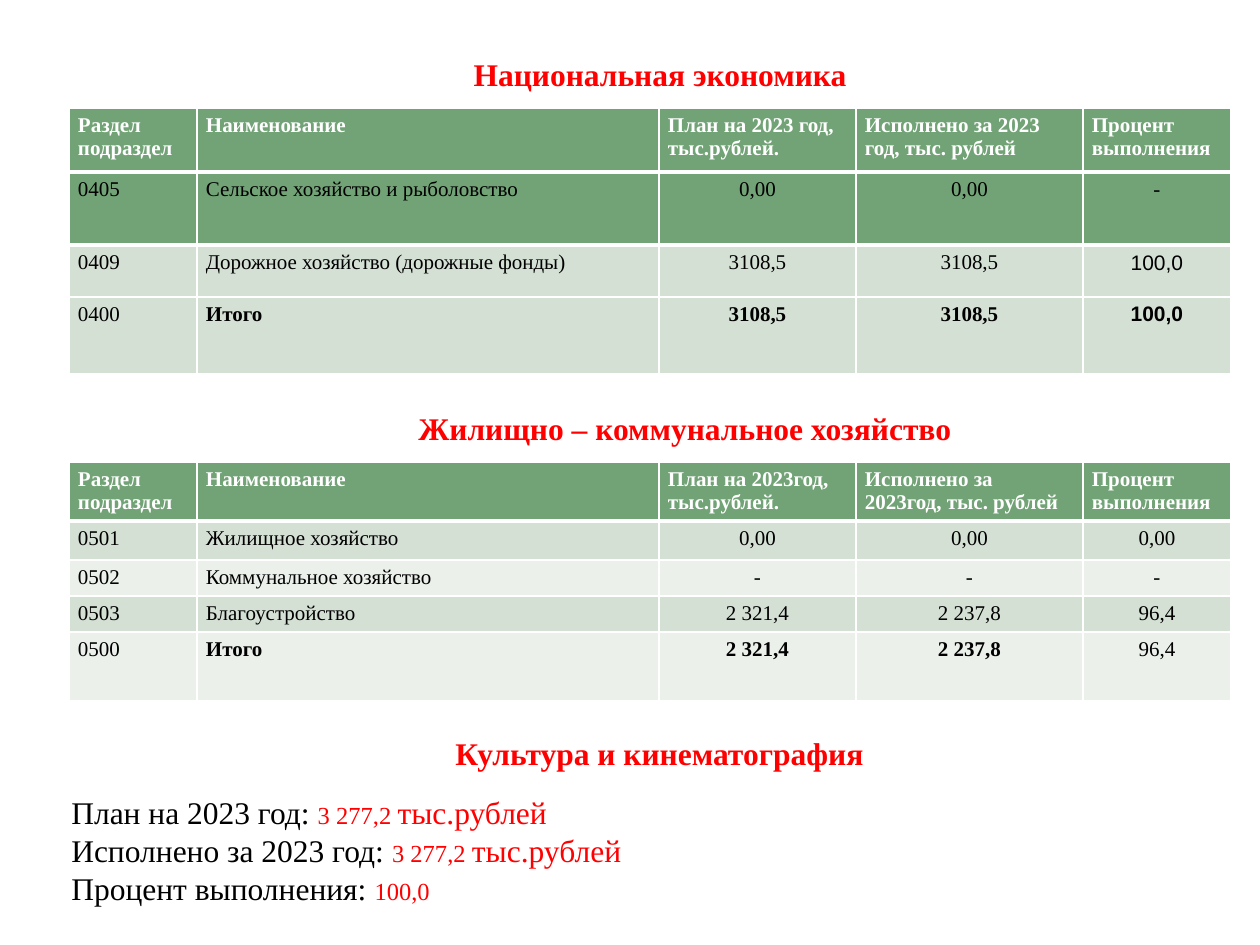
from dataclasses import dataclass

from lxml import etree
from pptx import Presentation
from pptx import util as u
from pptx.dml.color import RGBColor
from pptx.enum import text
from pptx.oxml.ns import qn

EMU_PER_PX = 914400 / 126
COLORS = {
    "header": "72A376",
    "band": "D5E0D5",
    "light": "EBF0EB",
    "white": "FFFFFF",
    "black": "000000",
    "red": "FF0000",
}
SERIF, SANS = "Times New Roman", "Arial"
COLUMN_WIDTHS = (128, 462, 197, 227, 148)
THIN, THICK = 0.96, 3


@dataclass
class Heading:
    caption: str
    box: tuple[int, int, int, int]
    wrap: bool = True


@dataclass
class Row:
    height: int
    fill: str
    cells: tuple[str, ...]
    percent_font: str = SERIF
    bold_columns: tuple[int, ...] = ()
    color: str = "black"
    thick_below: bool = False


@dataclass
class BudgetTable:
    left: int
    top: int
    rows: list[Row]


def px(length: int) -> u.Emu:
    return u.Emu(round(length * EMU_PER_PX))


def place(shape, box: tuple[int, int, int, int]) -> None:
    shape.left, shape.top, shape.width, shape.height = map(px, box)


def format_run(run, size: int, color: str, bold: bool = False, font: str = SERIF) -> None:
    run.font.size = u.Pt(size)
    run.font.name = font
    run.font.bold = bold
    run.font.color.rgb = RGBColor.from_string(COLORS[color])


def write_heading(shape, heading: Heading) -> None:
    place(shape, heading.box)
    frame = shape.text_frame
    frame.text = heading.caption
    frame.word_wrap = heading.wrap
    frame.auto_size = text.MSO_AUTO_SIZE.NONE
    frame.vertical_anchor = text.MSO_ANCHOR.TOP
    caption = frame.paragraphs[0]
    caption.alignment = text.PP_ALIGN.LEFT
    format_run(caption.runs[0], 18, "red", bold=True)


def set_borders(cell, above: float, below: float) -> None:
    properties = cell._tc.get_or_add_tcPr()
    for side, width in (("L", THIN), ("R", THIN), ("T", above), ("B", below)):
        line = etree.SubElement(properties, qn(f"a:ln{side}"), w=str(int(u.Pt(width))))
        fill = etree.SubElement(line, qn("a:solidFill"))
        etree.SubElement(fill, qn("a:srgbClr"), val=COLORS["white"])


def draw_table(slide, budget: BudgetTable) -> None:
    frame = slide.shapes.add_table(
        len(budget.rows), len(COLUMN_WIDTHS), px(budget.left), px(budget.top),
        px(sum(COLUMN_WIDTHS)), px(sum(row.height for row in budget.rows)))
    table = frame.table
    for column, width in zip(table.columns, COLUMN_WIDTHS):
        column.width = px(width)

    above = THIN
    for r, row in enumerate(budget.rows):
        table.rows[r].height = px(row.height)
        below = THICK if row.thick_below else THIN
        for c, value in enumerate(row.cells):
            cell = table.cell(r, c)
            cell.text = value
            cell.margin_left = cell.margin_right = px(9)
            cell.margin_top = cell.margin_bottom = px(6)
            set_borders(cell, above, below)
            cell.fill.solid()
            cell.fill.fore_color.rgb = RGBColor.from_string(COLORS[row.fill])
            centred = r > 0 and c >= 2
            font = row.percent_font if c == 4 else SERIF
            for paragraph in cell.text_frame.paragraphs:
                paragraph.alignment = text.PP_ALIGN.CENTER if centred else text.PP_ALIGN.LEFT
                format_run(paragraph.runs[0], 12, row.color, c in row.bold_columns, font)
        above = below


def header_row(height: int, plan: str, actual: str) -> Row:
    return Row(height, "header",
               ("Раздел подраздел", "Наименование", plan, actual, "Процент\nвыполнения"),
               bold_columns=(0, 1, 2, 3, 4), color="white", thick_below=True)


ECONOMY_HEADING = Heading("Национальная экономика", (461, 49, 420, 59))
OTHER_HEADINGS = [
    Heading("Жилищно – коммунальное хозяйство", (406, 403, 542, 59), wrap=False),
    Heading("Культура и кинематография", (443, 728, 551, 59)),
]

TABLES = [
    BudgetTable(69, 108, [
        header_row(64, "План на 2023 год, тыс.рублей.", "Исполнено за 2023 год, тыс. рублей"),
        Row(73, "header", ("0405", "Сельское хозяйство и рыболовство", "0,00", "0,00", "-"),
            thick_below=True),
        Row(52, "band",
            ("0409", "Дорожное хозяйство (дорожные фонды)", "3108,5", "3108,5", "100,0"),
            percent_font=SANS),
        Row(77, "band", ("0400", "Итого", "3108,5", "3108,5", "100,0"),
            percent_font=SANS, bold_columns=(1, 2, 3, 4)),
    ]),
    BudgetTable(69, 462, [
        header_row(59, "План на 2023год, тыс.рублей.", "Исполнено за 2023год, тыс. рублей"),
        Row(39, "band", ("0501", "Жилищное хозяйство", "0,00", "0,00", "0,00")),
        Row(36, "light", ("0502", "Коммунальное хозяйство", "-", "-", "-")),
        Row(36, "band", ("0503", "Благоустройство", "2 321,4", "2 237,8", "96,4")),
        Row(69, "light", ("0500", "Итого", "2 321,4", "2 237,8", "96,4"),
            bold_columns=(1, 2, 3)),
    ]),
]

# Label, figure and unit of each culture line
CULTURE_LINES = [
    ("План на 2023 год: ", "3 277,2 ", "тыс.рублей"),
    ("Исполнено за 2023 год: ", "3 277,2 ", "тыс.рублей"),
    ("Процент выполнения: ", "100,0"),
]
CULTURE_STYLES = ((18, "black"), (14, "red"), (18, "red"))


def draw_culture_summary(slide) -> None:
    summary = slide.shapes.add_textbox(px(59), px(787), px(857), px(129))
    frame = summary.text_frame
    frame.word_wrap = True
    for i, parts in enumerate(CULTURE_LINES):
        line = frame.add_paragraph() if i else frame.paragraphs[0]
        line.alignment = text.PP_ALIGN.JUSTIFY
        for part, (size, color) in zip(parts, CULTURE_STYLES):
            run = line.add_run()
            run.text = part
            format_run(run, size, color)


def main() -> None:
    deck = Presentation()
    deck.slide_width, deck.slide_height = px(1260), px(945)
    slide = deck.slides.add_slide(deck.slide_layouts[5])

    # Headings
    write_heading(slide.shapes.title, ECONOMY_HEADING)
    for heading in OTHER_HEADINGS:
        write_heading(slide.shapes.add_textbox(0, 0, 0, 0), heading)

    # Budget tables
    for budget in TABLES:
        draw_table(slide, budget)

    # Culture figures
    draw_culture_summary(slide)
    deck.save("out.pptx")


if __name__ == "__main__":
    main()
